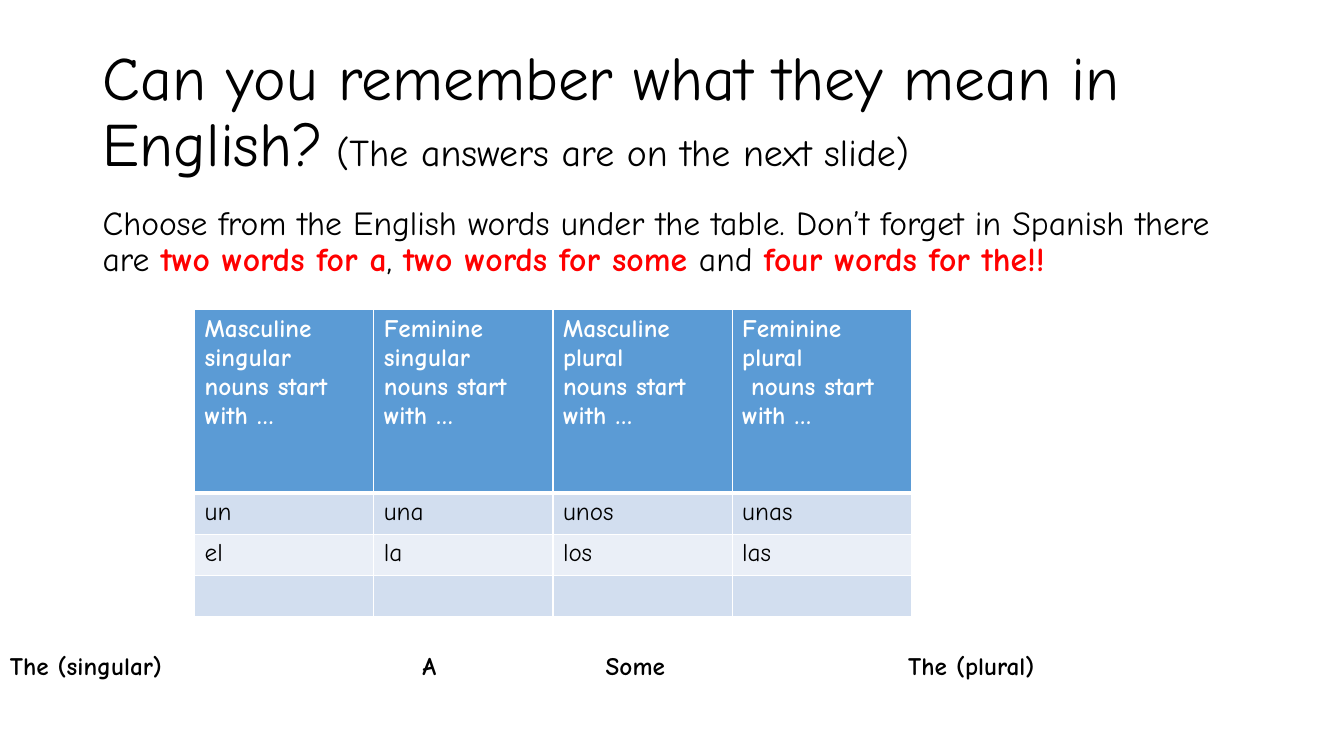
from lxml import etree
from pptx import Presentation
from pptx.dml.color import RGBColor
from pptx.enum.text import MSO_ANCHOR as Anchor
from pptx.oxml.ns import qn
from pptx.util import Inches, Pt

COLORS = {
    "text": "000000",
    "accent": "FF0000",
    "white": "FFFFFF",
    "header": "5B9BD5",
    "band_dark": "D2DEEF",
    "band_light": "EAEFF7",
}
FONT = "Comic Neue"


class SlideBuilder:
    """Holds the style and the current slide."""

    def __init__(self, slide):
        self.slide = slide

    def style_run(self, run, size, color="text", bold=False):
        run.font.name = FONT
        run.font.size = Pt(size)
        run.font.bold = bold
        run.font.color.rgb = RGBColor.from_string(COLORS[color])

    def add_text(self, box, runs, anchor=Anchor.TOP, line_spacing=1.0, space_before=0):
        """Each run is (text, size, color, bold)."""
        shape = self.slide.shapes.add_textbox(*(Inches(value) for value in box))
        text_frame = shape.text_frame
        text_frame.word_wrap = True
        text_frame.vertical_anchor = anchor
        paragraph = text_frame.paragraphs[0]
        paragraph.line_spacing = line_spacing
        paragraph.space_before = Pt(space_before)
        for text, *style in runs:
            run = paragraph.add_run()
            run.text = text
            self.style_run(run, *style)
        return paragraph

    def add_tab_stops(self, paragraph, positions):
        properties = paragraph._p.get_or_add_pPr()
        tab_list = etree.SubElement(properties, qn("a:tabLst"))
        for position in positions:
            etree.SubElement(tab_list, qn("a:tab"), pos=str(Inches(position)), algn="l")

    def add_borders(self, cell, bottom_width):
        properties = cell._tc.get_or_add_tcPr()
        for side, width in (("L", 1), ("R", 1), ("T", 1), ("B", bottom_width)):
            line = etree.SubElement(properties, qn(f"a:ln{side}"), w=str(Pt(width)))
            fill = etree.SubElement(line, qn("a:solidFill"))
            etree.SubElement(fill, qn("a:srgbClr"), val=COLORS["white"])

    def fill_cell(self, cell, text, fill, color, bold, bottom_width):
        self.add_borders(cell, bottom_width)
        cell.fill.solid()
        cell.fill.fore_color.rgb = RGBColor.from_string(COLORS[fill])
        cell.text_frame.text = text
        for paragraph in cell.text_frame.paragraphs:
            for run in paragraph.runs:
                self.style_run(run, 18, color, bold)

    def add_table(self, box, rows, row_heights):
        frame = self.slide.shapes.add_table(
            len(rows), len(rows[0]), *(Inches(value) for value in box))
        table = frame.table
        for column in table.columns:
            column.width = Inches(box[2] / len(rows[0]))
        for row_index, texts in enumerate(rows):
            table.rows[row_index].height = Inches(row_heights[row_index])
            if row_index == 0:
                style = ("header", "white", True, 3)
            else:
                band = "band_dark" if row_index % 2 else "band_light"
                style = (band, "text", False, 1)
            for column_index, text in enumerate(texts):
                self.fill_cell(table.cell(row_index, column_index), text, *style)


def main():
    presentation = Presentation()
    presentation.slide_width = Inches(13.33)
    presentation.slide_height = Inches(7.5)
    builder = SlideBuilder(presentation.slides.add_slide(presentation.slide_layouts[6]))

    # Title
    builder.add_text((0.92, 0.4, 11.5, 1.45), [
        ("Can you remember what they mean in English?", 44),
        (" (The answers are on the next slide)", 27),
    ], Anchor.MIDDLE, 0.9)

    # Instructions
    builder.add_text((0.92, 2, 11.5, 4.76), [
        ("Choose from the English words under the table. "
         "Don’t forget in Spanish there are ", 24),
        ("two words for a", 24, "accent", True),
        (", ", 24),
        ("two words for some ", 24, "accent", True),
        ("and ", 24),
        ("four words for the!!", 24, "accent", True),
    ], line_spacing=0.9, space_before=10)

    # Table of articles
    builder.add_table((1.93, 3.07, 7.11, 3.05), [
        ["Masculine singular nouns start with …",
         "Feminine singular\nnouns start with …",
         "Masculine plural\nnouns start with …",
         "Feminine\nplural\n nouns start with …"],
        ["un", "una", "unos", "unas"],
        ["el", "la", "los", "las"],
        ["", "", "", ""],
    ], [1.82, 0.41, 0.41, 0.41])

    # English words to choose from
    words = ["The (singular)", "A", "Some", "The (plural)"]
    word_line = builder.add_text(
        (0, 6.4, 13.33, 0.4), [("\t".join(words), 18, "text", True)])
    builder.add_tab_stops(word_line, [4.09, 5.91, 8.91])

    presentation.save("out.pptx")


if __name__ == "__main__":
    main()
